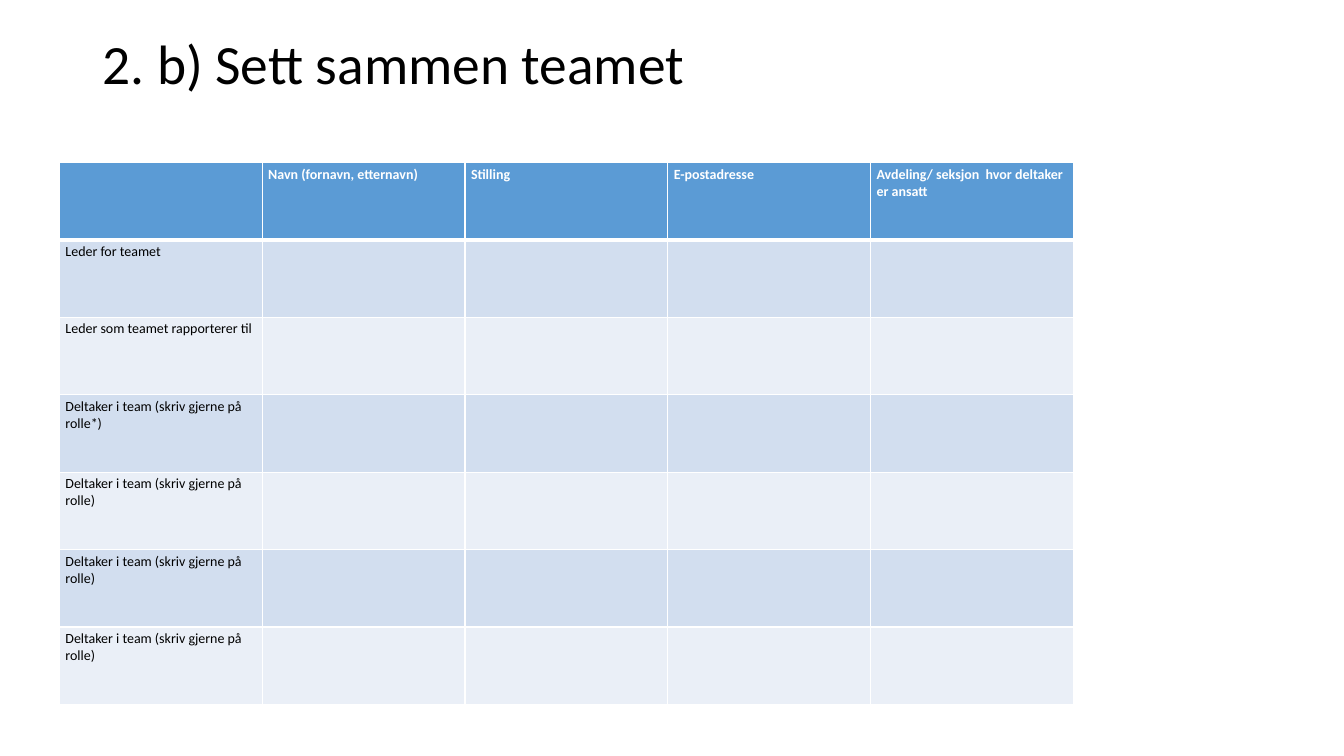
from lxml.etree import SubElement
from pptx import Presentation
from pptx.dml.color import RGBColor
from pptx.enum.text import MSO_ANCHOR, MSO_AUTO_SIZE, PP_ALIGN
from pptx.oxml.ns import qn
from pptx.util import Cm, Pt

BLACK = RGBColor(0x00, 0x00, 0x00)
WHITE = RGBColor(0xFF, 0xFF, 0xFF)
HEADER_BLUE = RGBColor(0x5B, 0x9B, 0xD5)
BAND_DARK = RGBColor(0xD2, 0xDE, 0xEF)
BAND_LIGHT = RGBColor(0xEA, 0xEF, 0xF7)

HEADINGS = ["", "Navn (fornavn, etternavn)", "Stilling", "E-postadresse",
            "Avdeling/ seksjon  hvor deltaker er ansatt"]
ROLES = ["Leder for teamet", "Leder som teamet rapporterer til",
         "Deltaker i team (skriv gjerne på rolle*)"]
ROLES += ["Deltaker i team (skriv gjerne på rolle)"] * 3


class TeamSlide:
    font_name = "Calibri"

    def __init__(self, deck):
        self.slide = deck.slides.add_slide(deck.slide_layouts[5])

    def style(self, paragraph, size, color, bold=False):
        font = paragraph.font
        font.name, font.size, font.bold = self.font_name, Pt(size), bold
        font.color.rgb = color

    def title(self, text, left, top, width, height):
        title = self.slide.shapes.title
        title.left, title.top = Cm(left), Cm(top)
        title.width, title.height = Cm(width), Cm(height)
        frame = title.text_frame
        frame.text = text
        frame.auto_size = MSO_AUTO_SIZE.NONE
        frame.vertical_anchor = MSO_ANCHOR.MIDDLE
        heading = frame.paragraphs[0]
        heading.alignment = PP_ALIGN.LEFT
        heading.line_spacing = 0.9
        self.style(heading, 39.6, BLACK)

    def borders(self, cell, top, bottom):
        properties = cell._tc.get_or_add_tcPr()
        for side, width in (("L", 1), ("R", 1), ("T", top), ("B", bottom)):
            line = SubElement(properties, qn(f"a:ln{side}"), w=str(Pt(width)))
            fill = SubElement(line, qn("a:solidFill"))
            SubElement(fill, qn("a:srgbClr"), val=str(WHITE))

    def cell(self, cell, text, row):
        is_header = row == 0
        self.borders(cell, 3 if row == 1 else 1, 3 if is_header else 1)
        cell.fill.solid()
        band = BAND_DARK if row % 2 else BAND_LIGHT
        cell.fill.fore_color.rgb = HEADER_BLUE if is_header else band
        cell.margin_left = cell.margin_right = Cm(0.15)
        cell.margin_top = cell.margin_bottom = Cm(0.08)
        cell.text = text
        self.style(cell.text_frame.paragraphs[0], 10,
                   WHITE if is_header else BLACK, is_header)

    def table(self, rows, left, top, column_width, row_height):
        columns = len(rows[0])
        table = self.slide.shapes.add_table(
            len(rows), columns, Cm(left), Cm(top),
            Cm(column_width * columns), Cm(row_height * len(rows))).table
        for column in table.columns:
            column.width = Cm(column_width)
        for r, texts in enumerate(rows):
            table.rows[r].height = Cm(row_height)
            for c, text in enumerate(texts):
                self.cell(table.cell(r, c), text, r)


def main():
    deck = Presentation()
    deck.slide_width, deck.slide_height = Cm(33.87), Cm(19.05)
    team = TeamSlide(deck)

    # Heading
    team.title("2. b) Sett sammen teamet", 2.33, 1.02, 29.21, 1.3)

    # Team form: one row per role, the other columns left to fill in
    role_rows = [[role] + [""] * (len(HEADINGS) - 1) for role in ROLES]
    team.table([HEADINGS] + role_rows, 1.5, 4.1, 5.11, 1.95)

    deck.save("out.pptx")


if __name__ == "__main__":
    main()
